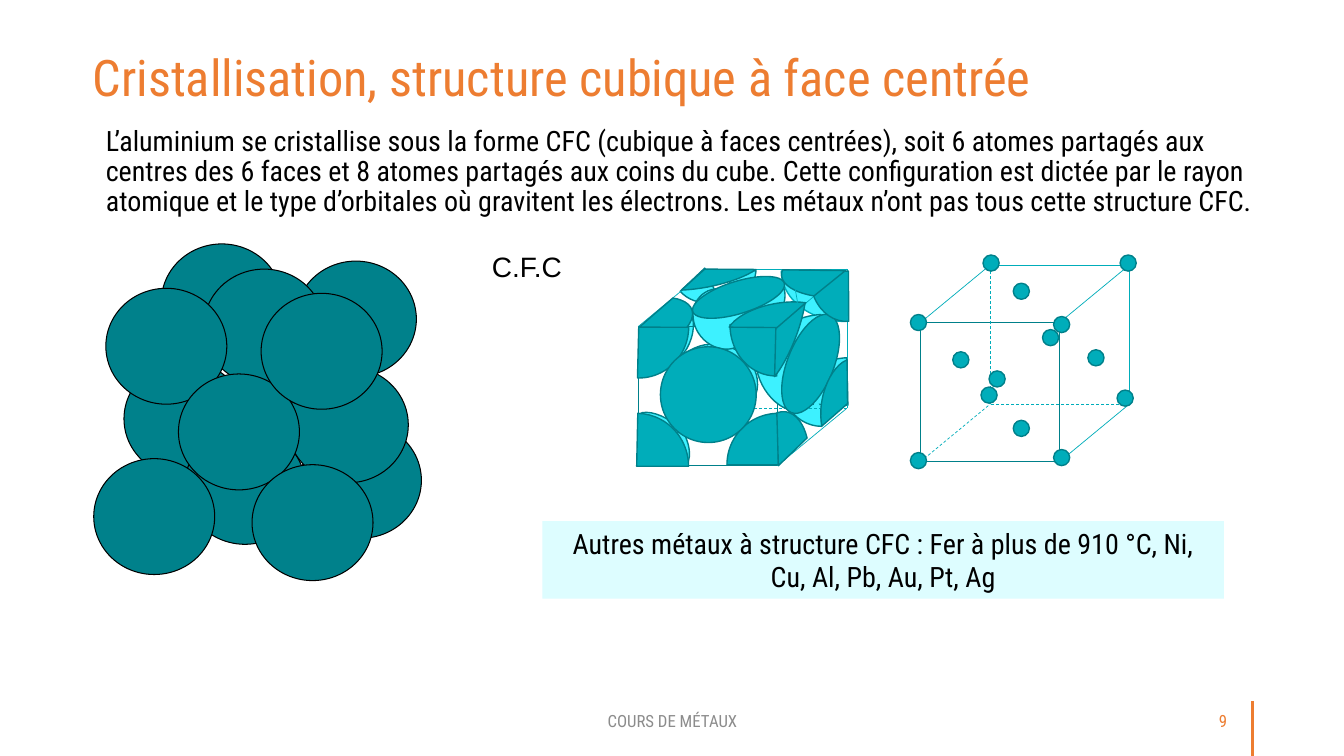
from dataclasses import dataclass

from lxml.etree import SubElement
from pptx import Presentation
from pptx.dml.color import RGBColor
from pptx.enum.dml import MSO_LINE as Dash
from pptx.enum.shapes import MSO_CONNECTOR as Link, MSO_SHAPE as Form
from pptx.enum.text import MSO_ANCHOR as Anchor, PP_ALIGN as Align
from pptx.oxml.ns import qn
from pptx.util import Inches, Pt


@dataclass(frozen=True)
class Theme:
    font: str = "Roboto Condensed"
    plain: str = "Arial"
    title: int = 36
    body: int = 20
    small: int = 12
    black: str = "000000"
    grey: str = "8C8C8C"
    orange: str = "ED7D31"
    ball: str = "00818B"
    teal: str = "00ADBA"
    edge: str = "00808A"
    light: str = "3DF1FF"
    pale: str = "DDFDFF"


T = Theme()

# Offsets of the stacked spheres, from back to front
BALLS = [(0.3, 1.16), (0.9, 1.83), (2.05, 1.77), (1.92, 1.22), (2, 0.17), (0.67, 0),
         (1.09, 0.25), (0.12, 0.44), (0.84, 1.29), (0, 2.13), (1.57, 2.19), (1.66, 0.49)]

# Offsets of the atoms in the lattice: corners, then faces
ATOMS = [(1.42, 0.61), (0.72, 0), (0, 0.59), (2.08, 0), (2.05, 1.34), (0.7, 1.31),
         (0, 1.96), (1.42, 1.93),
         (0.42, 0.96), (1.31, 0.74), (1.02, 0.28), (1.76, 0.94), (1.02, 1.64), (0.78, 1.15)]

# Cut atoms: left, top, width, height, rotation, then start and end of a pie
INNER = [
    (1.11, 0.08, 0.33, 0.5, 203.3),
    (0.38, 0.7, 0.76, 0.85, 99.9),
    (0.22, 0.57, 0.44, 0.18, 107.2),
    (0.16, 1.63, 0.45, 0.21, 250.6),
    (-0.02, 1.45, 0.43, 0.18, 23.7),
    (0.33, -0.35, 0.66, 0.68, 3.6, 37.41, 79.81),
    (0.5, -0.27, 0.67, 0.57, 352.6, 4.6, 39.9),
]
CORNER = [(1.42, -0.48, 1.28, 1, 0, 53.72, 108.06)]
SIDE = [
    (1.42, 0.69, 0.8, 0.87, 0, 54, 108),
    (1.23, 0.45, 1.22, 1, 356.9, 116.55, 162),
    (1.58, 0.88, 1, 0.94, 0, 108.92, 161.18),
]
HOLLOW = [(1.2, 0.62, 0.54, 0.81, 332.7), (0.56, 0.18, 0.55, 0.63, 320.7)]
OUTER = [
    (0.88, 1.43, 1.02, 1.02, 180, 0, 53.76),
    (0.86, 0.1, 1.01, 0.91, 90, 215.4, 54.31),
    (1.19, 0.71, 1.04, 0.46, 291.5),
    (-0.49, 0.07, 0.99, 1.01, 0, 0, 54.86),
    (1.09, 1.41, 0.6, 1.08, 187.6, 48.42, 77.01),
    (1.7, -0.48, 0.77, 1, 5.8, 50.32, 105.21),
    (0.87, 0.34, 1.04, 0.48, 349.4, 114.65, 197.18),
    (1.42, -0.25, 1.27, 0.53, 355.5, 87.37, 111.1),
    (0.52, 0.12, 0.95, 0.32, 342.8),
    (0.06, -0.18, 1.2, 0.36, 349.1, 6.79, 89.26),
    (0.22, 0.77, 0.95, 0.95, 0),
    (-0.54, 1.44, 1.05, 1.03, 267.4, 2.29, 55.58),
    (-0.54, 0.32, 1.1, 0.51, 162, 94.26, 118.92),
    (1.62, 1.08, 0.91, 0.51, 101.2, 22.64, 100.96),
    (1.15, -0.06, 0.43, 1.3, 20.4, 179.39, 42.63),
]


def hue(code):
    return RGBColor.from_string(code)


def shape(slide, form, box, fill=None, edge=None, width=1):
    item = slide.shapes.add_shape(form, *map(Inches, box))
    item.shadow.inherit = False
    if fill:
        item.fill.solid()
        item.fill.fore_color.rgb = hue(fill)
    else:
        item.fill.background()
    if edge:
        item.line.color.rgb = hue(edge)
        item.line.width = Pt(width)
    else:
        item.line.fill.background()
    return item


def line(slide, start, end, color=T.teal, width=0.5, dash=False):
    item = slide.shapes.add_connector(Link.STRAIGHT, *map(Inches, (*start, *end)))
    SubElement(item._element.spPr, qn("a:effectLst"))
    item.line.color.rgb = hue(color)
    item.line.width = Pt(width)
    if dash:
        item.line.dash_style = Dash.DASH


def write(item, text, size=T.body, color=T.black, font=T.font, align=Align.LEFT,
          pad=(0.1, 0.05), wrap=True, anchor=Anchor.TOP, space=1.0):
    frame = item.text_frame
    side, cap = map(Inches, pad)
    looks = {"word_wrap": wrap, "vertical_anchor": anchor, "margin_left": side,
             "margin_right": side, "margin_top": cap, "margin_bottom": cap}
    for name, value in looks.items():
        setattr(frame, name, value)
    para = frame.paragraphs[0]
    para.alignment, para.line_spacing = align, space
    run = para.add_run()
    run.text = text
    for name, value in {"size": Pt(size), "name": font}.items():
        setattr(run.font, name, value)
    run.font.color.rgb = hue(color)


def label(slide, box, text, **style):
    write(slide.shapes.add_textbox(*map(Inches, box)), text, **style)


# Stack of touching spheres
def stack(slide, x, y):
    for dx, dy in BALLS:
        shape(slide, Form.OVAL, (x + dx, y + dy, 1.2, 1.15), T.ball, T.black, 0.75)


# Wire cube: front square at x, y and a back square shifted up and right
def cube(slide, x, y, side=1.38, dx=0.69, dy=-0.57):
    shape(slide, Form.RECTANGLE, (x, y, side, side), edge=T.edge)
    front = [(x, y), (x + side, y), (x + side, y + side), (x, y + side)]
    back = [(px + dx, py + dy) for px, py in front]
    for i in range(4):
        line(slide, front[i], back[i], dash=i == 3)
        line(slide, back[i], back[(i + 1) % 4], dash=i > 1)


def cuts(slide, x, y, parts, fill, edge=T.edge):
    for dx, dy, w, h, turn, *arc in parts:
        form = Form.PIE if arc else Form.OVAL
        item = shape(slide, form, (x + dx, y + dy, w, h), fill, edge)
        item.rotation = turn
        for i, angle in enumerate(arc):
            item.adjustments[i] = angle


# Cube with its atoms cut at the faces
def block(slide, x, y):
    cuts(slide, x, y, INNER, T.light)
    cuts(slide, x, y, CORNER, T.light, T.teal)
    cuts(slide, x, y, SIDE, T.light)
    cube(slide, x, y + 0.57)
    cuts(slide, x, y, HOLLOW, T.light)
    cuts(slide, x, y, OUTER, T.teal)
    line(slide, (x + 1.55, y + 0.16), (x + 1.59, y + 0.38))
    shape(slide, Form.OVAL, (x + 1.75, y + 1.33, 0.04, 0.04), T.light, T.light)


# Cube with small atoms at its sites
def lattice(slide, x, y):
    cube(slide, x + 0.1, y + 0.67)
    for dx, dy in ATOMS:
        shape(slide, Form.OVAL, (x + dx, y + dy, 0.16, 0.16), T.teal, T.edge)


# Title and introduction
def head(slide, x, y):
    label(slide, (x, y, 10.74, 0.65), "Cristallisation, structure cubique à face centrée",
          size=T.title, color=T.orange, pad=(0, 0), space=0.9)
    label(slide, (x + 0.13, y + 0.73, 11.5, 4.97),
          "L’aluminium se cristallise sous la forme CFC (cubique à faces centrées), soit "
          "6 atomes partagés aux centres des 6 faces et 8 atomes partagés aux coins du cube. "
          "Cette configuration est dictée par le rayon atomique et le type d’orbitales où "
          "gravitent les électrons. Les métaux n’ont pas tous cette structure CFC.",
          pad=(0, 0), space=0.9)


# Caption and list of other metals
def notes(slide, x, y):
    label(slide, (x, y, 0.93, 0.43), "C.F.C", font=T.plain, wrap=False)
    panel = shape(slide, Form.RECTANGLE, (x + 0.6, y + 2.74, 6.76, 0.77), T.pale)
    write(panel, "Autres métaux à structure CFC : Fer à plus de 910 °C, Ni, Cu, Al, Pb, Au, Pt, Ag",
          align=Align.CENTER, pad=(0.25, 0.05))


# Footer, page number and accent rule
def foot(slide, x, y):
    style = {"size": T.small, "anchor": Anchor.MIDDLE}
    label(slide, (x, y, 4.5, 0.4), "COURS DE MÉTAUX", color=T.grey, align=Align.CENTER, **style)
    label(slide, (x + 6.53, y, 1.32, 0.4), "9", color=T.orange, align=Align.RIGHT, **style)
    line(slide, (x + 8, y + 0.55), (x + 8, y), T.orange, 2.25)


def main():
    deck = Presentation()
    deck.slide_width, deck.slide_height = Inches(13.33), Inches(7.5)
    slide = deck.slides.add_slide(deck.slide_layouts[6])
    head(slide, 0.92, 0.53)
    stack(slide, 0.93, 2.42)
    notes(slide, 4.78, 2.43)
    block(slide, 6.33, 2.67)
    lattice(slide, 9.03, 2.53)
    foot(slide, 4.42, 6.95)
    deck.save("out.pptx")


if __name__ == "__main__":
    main()
